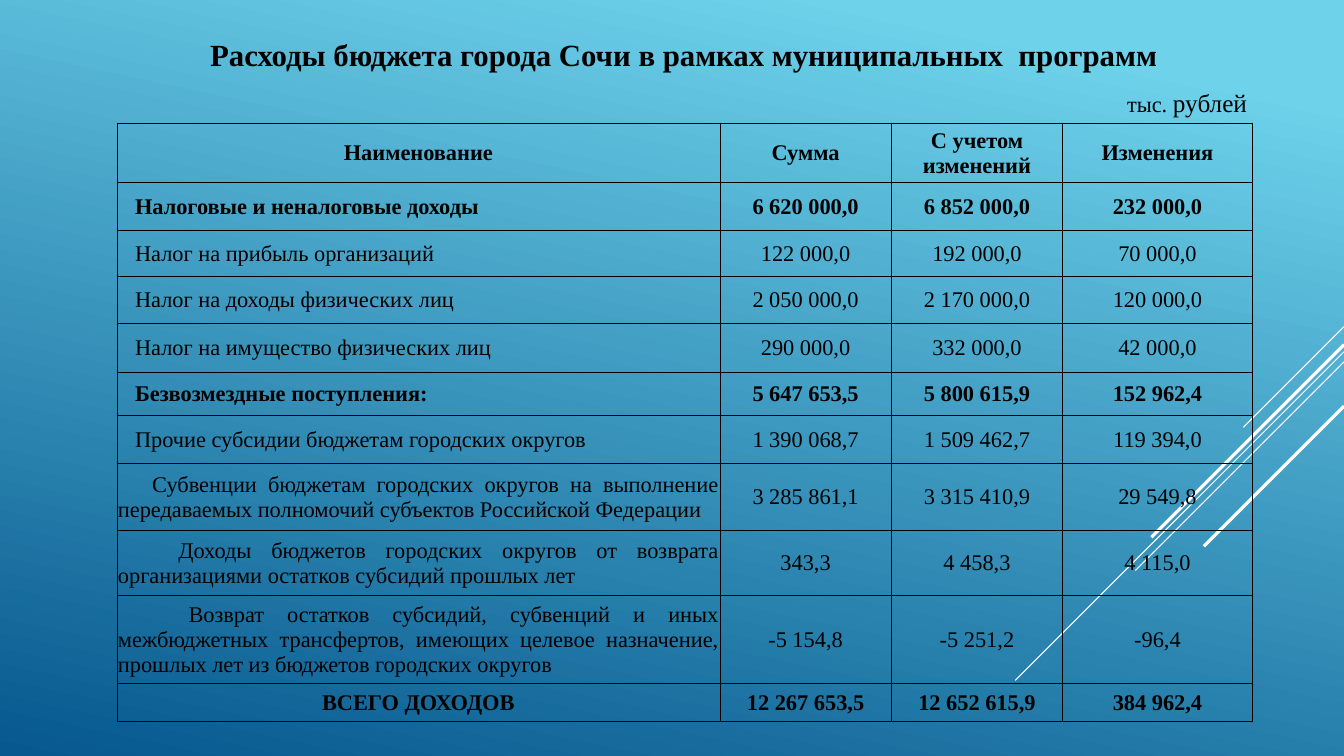
from lxml.etree import SubElement
from pptx import Presentation
from pptx.dml.color import RGBColor
from pptx.enum.shapes import MSO_CONNECTOR
from pptx.enum.text import MSO_ANCHOR, PP_ALIGN
from pptx.oxml.ns import qn
from pptx.util import Inches, Pt

TITLE = "Расходы бюджета города Сочи в рамках муниципальных  программ"
UNITS = [("тыс. ", 16), ("рублей", 18)]
HEADER = ("Наименование", "Сумма", "С учетом изменений", "Изменения")
BUDGET = [
    ("Налоговые и неналоговые доходы", "6 620 000,0", "6 852 000,0", "232 000,0"),
    ("Налог на прибыль организаций", "122 000,0", "192 000,0", "70 000,0"),
    ("Налог на доходы физических лиц", "2 050 000,0", "2 170 000,0", "120 000,0"),
    ("Налог на имущество физических лиц", "290 000,0", "332 000,0", "42 000,0"),
    ("Безвозмездные поступления:", "5 647 653,5", "5 800 615,9", "152 962,4"),
    ("Прочие субсидии бюджетам городских округов", "1 390 068,7", "1 509 462,7", "119 394,0"),
    ("Субвенции бюджетам городских округов на выполнение передаваемых полномочий "
     "субъектов Российской Федерации", "3 285 861,1", "3 315 410,9", "29 549,8"),
    ("Доходы бюджетов городских округов от возврата организациями остатков "
     "субсидий прошлых лет", "343,3", "4 458,3", "4 115,0"),
    ("Возврат остатков субсидий, субвенций и иных межбюджетных трансфертов, имеющих "
     "целевое назначение, прошлых лет из бюджетов городских округов",
     "-5 154,8", "-5 251,2", "-96,4"),
]
TOTAL = ("ВСЕГО ДОХОДОВ", "12 267 653,5", "12 652 615,9", "384 962,4")
ROWS = [HEADER, *BUDGET, TOTAL]
BOLD_ROWS = {0, 1, 5, len(ROWS) - 1}
FIRST_LINE_INDENTS = {7: 0.34, 8: 0.6, 9: 0.7}
COLUMN_WIDTHS = (5.98, 1.7, 1.7, 1.88)
ROW_HEIGHTS = (0.59, 0.48, 0.45, 0.47, 0.48, 0.43, 0.48, 0.66, 0.65, 0.87, 0.38)
RAYS = [(3.24, 1.0, 0.75), (3.49, 3.26, 0.75), (3.59, 2.07, 0.75),
        (3.42, 1.91, 2.25), (4.03, 1.39, 2.25)]
SLIDE_WIDTH, SLIDE_HEIGHT = 13.33, 7.5

THEME = {
    "font": "Times New Roman",
    "ink": RGBColor.from_string("000000"),
    "ray": RGBColor.from_string("FFFFFF"),
    "sky": [(0.1, RGBColor.from_string("6ED2EB")), (1.0, RGBColor.from_string("06588E"))],
    "sky_angle": 360 - 102,
    "title": 22,
    "body": 16,
    "border": 0.5,
}


def write(frame, text, size=THEME["body"], bold=False, align=PP_ALIGN.LEFT, indent=0):
    frame.word_wrap = True
    paragraph = frame.paragraphs[0]
    paragraph.alignment = align
    if indent:
        properties = paragraph._p.get_or_add_pPr()
        properties.set("marL", "0")
        properties.set("indent", str(Inches(indent)))
    run = paragraph.add_run()
    run.text = text
    run.font.name = THEME["font"]
    run.font.size = Pt(size)
    run.font.bold = bold
    run.font.color.rgb = THEME["ink"]


def add_frame(slide, left, top, width, height):
    return slide.shapes.add_textbox(
        Inches(left), Inches(top), Inches(width), Inches(height)).text_frame


def paint_background(slide):
    fill = slide.background.fill
    fill.gradient()
    fill.gradient_angle = THEME["sky_angle"]
    for stop, (position, color) in zip(fill.gradient_stops, THEME["sky"]):
        stop.position = position
        stop.color.rgb = color


def add_rays(slide):
    for top, reach, weight in RAYS:
        ray = slide.shapes.add_connector(
            MSO_CONNECTOR.STRAIGHT, Inches(SLIDE_WIDTH), Inches(top),
            Inches(SLIDE_WIDTH - reach), Inches(top + reach))
        ray.line.color.rgb = THEME["ray"]
        ray.line.width = Pt(weight)
        SubElement(ray._element.spPr, qn("a:effectLst"))


def frame_cell(cell):
    properties = cell._tc.get_or_add_tcPr()
    for side in ("lnL", "lnR", "lnT", "lnB"):
        border = SubElement(properties, qn(f"a:{side}"), w=str(Pt(THEME["border"])))
        solid = SubElement(border, qn("a:solidFill"))
        SubElement(solid, qn("a:srgbClr"), val=str(THEME["ink"]))
    cell.fill.background()
    cell.vertical_anchor = MSO_ANCHOR.MIDDLE
    cell.margin_left = cell.margin_right = cell.margin_top = Inches(0.01)
    cell.margin_bottom = 0


def add_budget(slide):
    budget = slide.shapes.add_table(
        len(ROWS), len(COLUMN_WIDTHS), Inches(1.16), Inches(1.22),
        Inches(sum(COLUMN_WIDTHS)), Inches(sum(ROW_HEIGHTS))).table
    budget.first_row = budget.horz_banding = False
    for column, width in zip(budget.columns, COLUMN_WIDTHS):
        column.width = Inches(width)
    for r, values in enumerate(ROWS):
        budget.rows[r].height = Inches(ROW_HEIGHTS[r])
        for c, value in enumerate(values):
            cell = budget.cell(r, c)
            frame_cell(cell)
            is_item = c == 0 and 0 < r < len(ROWS) - 1
            write(cell.text_frame, value, bold=r in BOLD_ROWS,
                  align=PP_ALIGN.JUSTIFY if is_item else PP_ALIGN.CENTER,
                  indent=FIRST_LINE_INDENTS.get(r, 0.17) if is_item else 0)


def main():
    deck = Presentation()
    deck.slide_width, deck.slide_height = Inches(SLIDE_WIDTH), Inches(SLIDE_HEIGHT)
    slide = deck.slides.add_slide(deck.slide_layouts[6])
    paint_background(slide)
    add_rays(slide)
    write(add_frame(slide, 1.97, 0.31, 9.62, 0.47), TITLE,
          size=THEME["title"], bold=True, align=PP_ALIGN.CENTER)
    units = add_frame(slide, 11.08, 0.82, 1.51, 0.4)
    for text, size in UNITS:
        write(units, text, size=size)
    add_budget(slide)
    deck.save("out.pptx")


if __name__ == "__main__":
    main()
